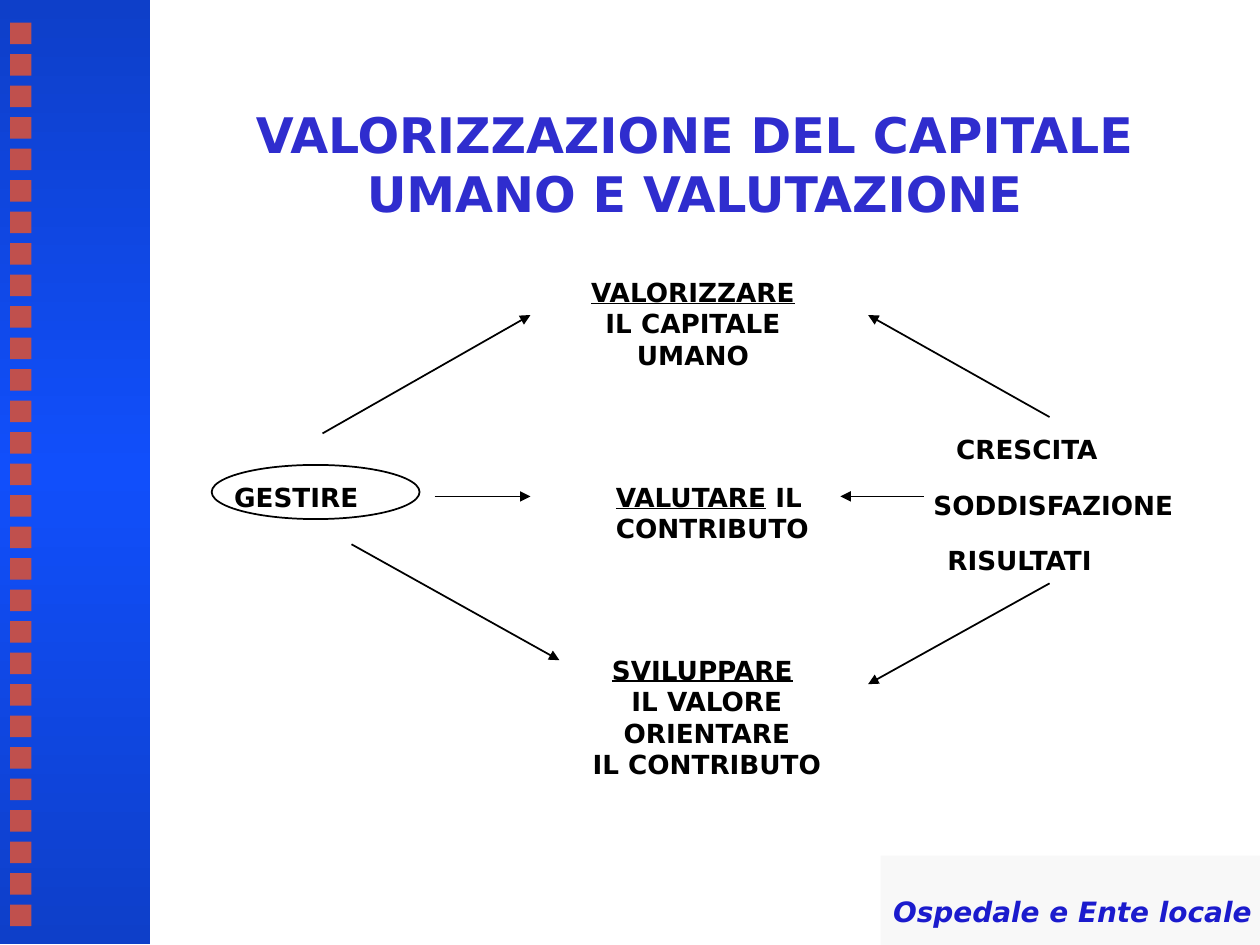
from copy import deepcopy

from lxml import etree
from pptx import Presentation
from pptx.dml.color import RGBColor
from pptx.enum.shapes import MSO_CONNECTOR, MSO_SHAPE
from pptx.enum.text import MSO_ANCHOR, MSO_AUTO_SIZE, PP_ALIGN
from pptx.oxml.ns import qn
from pptx.util import Inches, Pt

RECTANGLE, OVAL = MSO_SHAPE.RECTANGLE, MSO_SHAPE.OVAL
STRAIGHT = MSO_CONNECTOR.STRAIGHT
LEFT, CENTER = PP_ALIGN.LEFT, PP_ALIGN.CENTER
TOP, MIDDLE = MSO_ANCHOR.TOP, MSO_ANCHOR.MIDDLE
FIT_SHAPE, NO_FIT = MSO_AUTO_SIZE.SHAPE_TO_FIT_TEXT, MSO_AUTO_SIZE.NONE

FONT = "DejaVu Sans"
COLORS = {
    "band_edge": "0E3FC9",
    "band_middle": "114FFB",
    "square": "C0504D",
    "title": "2F2DCE",
    "ink": "000000",
    "footer_fill": "F8F8F8",
    "footer_text": "1B1BCD",
}


class Page:
    def __init__(self, deck):
        self.slide = deck.slides.add_slide(deck.slide_layouts[5])
        self.shapes = self.slide.shapes

    def color(self, name):
        return RGBColor.from_string(COLORS[name])

    def style(self, para, size, color, align=LEFT, italic=False):
        para.alignment = align
        font = para.font
        font.name, font.size = FONT, Pt(size)
        font.bold, font.italic = True, italic
        font.color.rgb = self.color(color)

    def title(self, text, left, top, width, height):
        box = self.shapes.title
        box.left, box.top = Inches(left), Inches(top)
        box.width, box.height = Inches(width), Inches(height)
        frame = box.text_frame
        frame.text = text
        frame.word_wrap, frame.auto_size = True, NO_FIT
        frame.vertical_anchor = MIDDLE
        self.style(frame.paragraphs[0], 28, "title", CENTER)

    def shape(self, kind, left, top, width, height, fill=None, line=None):
        shape = self.shapes.add_shape(
            kind, Inches(left), Inches(top), Inches(width), Inches(height))
        shape.shadow.inherit = False
        if fill:
            shape.fill.solid()
            shape.fill.fore_color.rgb = self.color(fill)
        else:
            shape.fill.background()
        if line:
            shape.line.color.rgb = self.color(line)
            shape.line.width = Pt(1)
        else:
            shape.line.fill.background()
        return shape

    def band(self, left, top, width, height):
        fill = self.shape(RECTANGLE, left, top, width, height).fill
        fill.gradient()
        fill.gradient_angle = 90
        first = fill.gradient_stops[0]._gs
        first.addnext(deepcopy(first))
        names = ("band_edge", "band_middle", "band_edge")
        for index, (stop, name) in enumerate(zip(fill.gradient_stops, names)):
            stop.position = index / 2
            stop.color.rgb = self.color(name)

    def label(self, lines, left, top, width, height, align=LEFT):
        box = self.shapes.add_textbox(
            Inches(left), Inches(top), Inches(width), Inches(height))
        frame = box.text_frame
        frame.word_wrap, frame.auto_size = False, FIT_SHAPE
        for index, (underlined, plain) in enumerate(lines):
            para = frame.paragraphs[0] if index == 0 else frame.add_paragraph()
            self.style(para, 15, "ink", align)
            for text, underline in ((underlined, True), (plain, False)):
                if text:
                    span = para.add_run()
                    span.text = text
                    span.font.underline = underline

    def arrow(self, start, end):
        points = [Inches(value) for value in (*start, *end)]
        connector = self.shapes.add_connector(STRAIGHT, *points)
        connector.line.color.rgb = self.color("ink")
        connector.line.width = Pt(1)
        head = etree.SubElement(connector.line._get_or_add_ln(), qn("a:tailEnd"))
        head.set("type", "triangle")
        etree.SubElement(connector._element.spPr, qn("a:effectLst"))

    def footer(self, text, left, top, width, height):
        box = self.shape(RECTANGLE, left, top, width, height, "footer_fill")
        frame = box.text_frame
        frame.text = text
        frame.word_wrap, frame.vertical_anchor = True, TOP
        frame.margin_top = Inches(0.31)
        self.style(frame.paragraphs[0], 16, "footer_text", italic=True)


def main():
    deck = Presentation()
    deck.slide_width, deck.slide_height = Inches(10), Inches(7.5)
    page = Page(deck)

    page.band(0, 0, 1.19, 7.49)
    for index in range(29):
        page.shape(RECTANGLE, 0.08, 0.18 + index * 0.25, 0.17, 0.17, "square")

    page.title("VALORIZZAZIONE DEL CAPITALE UMANO E VALUTAZIONE",
               1.29, 0.67, 8.44, 1.25)

    page.shape(OVAL, 1.68, 3.69, 1.65, 0.43, line="ink")
    page.label([("", "GESTIRE")], 1.76, 3.77, 1.22, 0.35)
    page.label([("VALUTARE", " IL"), ("", "CONTRIBUTO")], 4.79, 3.77, 1.77, 0.6)
    page.label([("", "CRESCITA")], 7.49, 3.39, 1.37, 0.35)
    page.label([("", "SODDISFAZIONE")], 7.31, 3.83, 2.18, 0.35)
    page.label([("", "RISULTATI")], 7.42, 4.27, 1.48, 0.35)
    page.label([("SVILUPPARE", " "), ("", "IL VALORE"), ("", "ORIENTARE"),
                ("", "IL CONTRIBUTO")], 4.42, 5.14, 2.38, 1.1, CENTER)
    page.label([("VALORIZZARE", ""), ("", "IL CAPITALE"), ("", "UMANO")],
               4.57, 2.14, 1.86, 0.85, CENTER)

    for start, end in (
        ((3.45, 3.94), (4.21, 3.94)),
        ((7.33, 3.94), (6.67, 3.94)),
        ((2.56, 3.44), (4.21, 2.5)),
        ((8.33, 3.31), (6.89, 2.5)),
        ((2.79, 4.32), (4.44, 5.24)),
        ((8.33, 4.63), (6.89, 5.43)),
    ):
        page.arrow(start, end)

    page.footer("Ospedale e Ente locale", 6.99, 6.79, 3.44, 0.91)
    deck.save("out.pptx")


if __name__ == "__main__":
    main()
